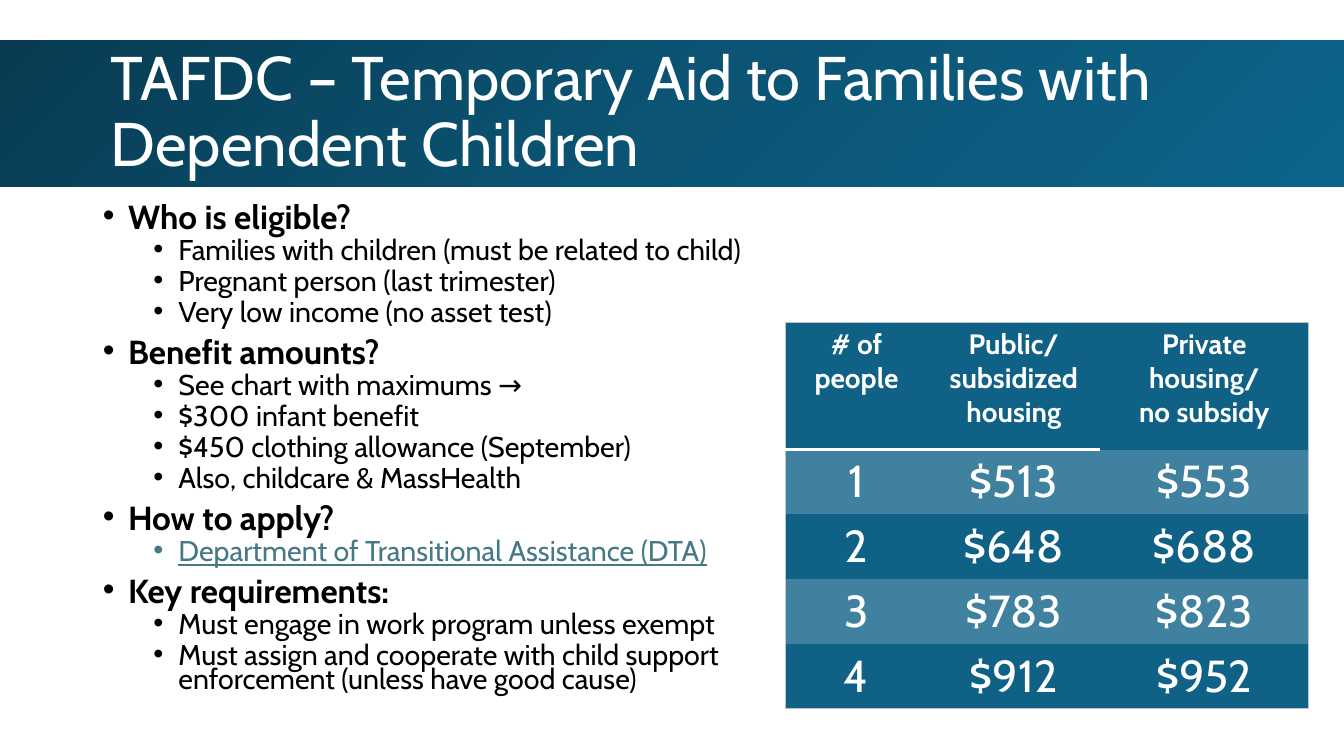
from copy import deepcopy

from lxml import etree
from pptx import Presentation
from pptx.dml import color
from pptx.enum import text
from pptx.oxml import ns
from pptx.util import Inches, Pt

FONT = "Cabin"
WHITE, BLACK, LINK = "FFFFFF", "000000", "467886"
BASE, STRIPE, EDGE = "0F6186", "3F819E", "BDC5CD"
BAND = [(0, "083B52"), (0.5, "0B5474"), (1, "0D638A")]
TITLE = "TAFDC – Temporary Aid to Families with\vDependent Children"
DTA = "Department of Transitional Assistance (DTA)"
SECTIONS = [
    ("Who is eligible?", [
        "Families with children (must be related to child)",
        "Pregnant person (last trimester)",
        "Very low income (no asset test)"]),
    ("Benefit amounts?", [
        "See chart with maximums →",
        "$300 infant benefit",
        "$450 clothing allowance (September)",
        "Also, childcare & MassHealth"]),
    ("How to apply?", [DTA]),
    ("Key requirements:", [
        "Must engage in work program unless exempt",
        "Must assign and cooperate with child support enforcement "
        "(unless have good cause)"]),
]
ROWS = [
    ("# of people", "Public/\nsubsidized housing", "Private housing/\nno subsidy"),
    ("1", "$513", "$553"),
    ("2", "$648", "$688"),
    ("3", "$783", "$823"),
    ("4", "$912", "$952"),
]
COLUMN_WIDTHS = [1.41, 1.71, 2.07]
ROW_HEIGHTS = [1.26] + [0.63] * 4
ROW_HEIGHTS[1:] = [0.64] * 4
LEVELS = [
    {"size": 23.8, "bold": True, "before": 10, "indent": 0.25},
    {"size": 20.4, "bold": False, "before": 5, "indent": 0.75},
]


def rgb(value):
    return color.RGBColor.from_string(value)


def apply(target, values):
    for name, value in values.items():
        setattr(target, name, value)


def place(shape, left, top, width, height):
    apply(shape, {"left": Inches(left), "top": Inches(top),
                  "width": Inches(width), "height": Inches(height)})


def style(font, size, shade, **extra):
    apply(font, {"name": FONT, "size": Pt(size), **extra})
    font.color.rgb = rgb(shade)


def add_title(page):
    box = page.shapes.title
    place(box, 0, 0.4, 13.33, 1.45)
    box.fill.gradient()
    box.fill.gradient_angle = 315
    stops = box.element.spPr.find(".//" + ns.qn("a:gsLst"))
    stops.insert(1, deepcopy(stops[0]))
    for stop, (position, shade) in zip(box.fill.gradient_stops, BAND):
        stop.position = position
        stop.color.rgb = rgb(shade)
    frame = box.text_frame
    apply(frame, {"text": TITLE, "word_wrap": True, "margin_left": Inches(1.1),
                  "auto_size": text.MSO_AUTO_SIZE.NONE,
                  "vertical_anchor": text.MSO_ANCHOR.MIDDLE})
    para = frame.paragraphs[0]
    apply(para, {"alignment": text.PP_ALIGN.LEFT, "line_spacing": 0.9})
    for span in para.runs:
        style(span.font, 44, WHITE, bold=False)


def add_list(page):
    box = page.placeholders[1]
    place(box, 0.92, 2, 6.89, 5.1)
    frame = box.text_frame
    apply(frame, {"word_wrap": True, "auto_size": text.MSO_AUTO_SIZE.NONE})
    lines = [(level, line) for heading, items in SECTIONS
             for level, line in [(0, heading)] + [(1, item) for item in items]]
    for index, (level, line) in enumerate(lines):
        look = LEVELS[level]
        para = frame.add_paragraph() if index else frame.paragraphs[0]
        apply(para, {"level": level, "line_spacing": 0.7,
                     "space_before": Pt(look["before"]), "space_after": Pt(0)})
        layout = para._p.get_or_add_pPr()
        layout.set("marL", str(Inches(look["indent"])))
        layout.set("indent", str(Inches(-0.25)))
        etree.SubElement(layout, ns.qn("a:buFont"), typeface="Arial")
        etree.SubElement(layout, ns.qn("a:buChar"), char="•")
        span = para.add_run()
        span.text = line
        linked = line == DTA
        style(span.font, look["size"], LINK if linked else BLACK,
              bold=look["bold"], underline=linked)


def add_border(cell, side, shade, width):
    line = etree.SubElement(cell._tc.get_or_add_tcPr(), ns.qn("a:ln" + side),
                            w=str(Pt(width)))
    fill = etree.SubElement(line, ns.qn("a:solidFill"))
    etree.SubElement(fill, ns.qn("a:srgbClr"), val=shade)


def add_benefits(page):
    frame = page.shapes.add_table(
        len(ROWS), len(COLUMN_WIDTHS), Inches(7.79), Inches(3.2),
        Inches(sum(COLUMN_WIDTHS)), Inches(sum(ROW_HEIGHTS)))
    table = frame.table
    table._tbl.tblPr.find(ns.qn("a:tableStyleId")).text = (
        "{2D5ABB26-0587-4C30-8999-92F81FD0307C}")
    for column, width in zip(table.columns, COLUMN_WIDTHS):
        column.width = Inches(width)
    for row, height in zip(table.rows, ROW_HEIGHTS):
        row.height = Inches(height)
    last_row, last_column = len(ROWS) - 1, len(COLUMN_WIDTHS) - 1
    for r, values in enumerate(ROWS):
        for c, value in enumerate(values):
            cell = table.cell(r, c)
            cell.text = value
            for para in cell.text_frame.paragraphs:
                para.alignment = text.PP_ALIGN.CENTER
                for span in para.runs:
                    style(span.font, 32 if r else 20, WHITE, bold=r == 0)
            edges = [("L", c == 0), ("R", c == last_column),
                     ("T", r == 0), ("B", r == last_row)]
            for side, outer in edges:
                if outer:
                    add_border(cell, side, EDGE, 1)
            if r == 0 and c < last_column:
                add_border(cell, "B", WHITE, 2)
            cell.fill.solid()
            cell.fill.fore_color.rgb = rgb(STRIPE if r % 2 else BASE)


def main():
    deck = Presentation()
    apply(deck, {"slide_width": Inches(13.33), "slide_height": Inches(7.5)})
    page = deck.slides.add_slide(deck.slide_layouts[1])
    add_title(page)
    add_list(page)
    add_benefits(page)
    deck.save("out.pptx")


if __name__ == "__main__":
    main()
